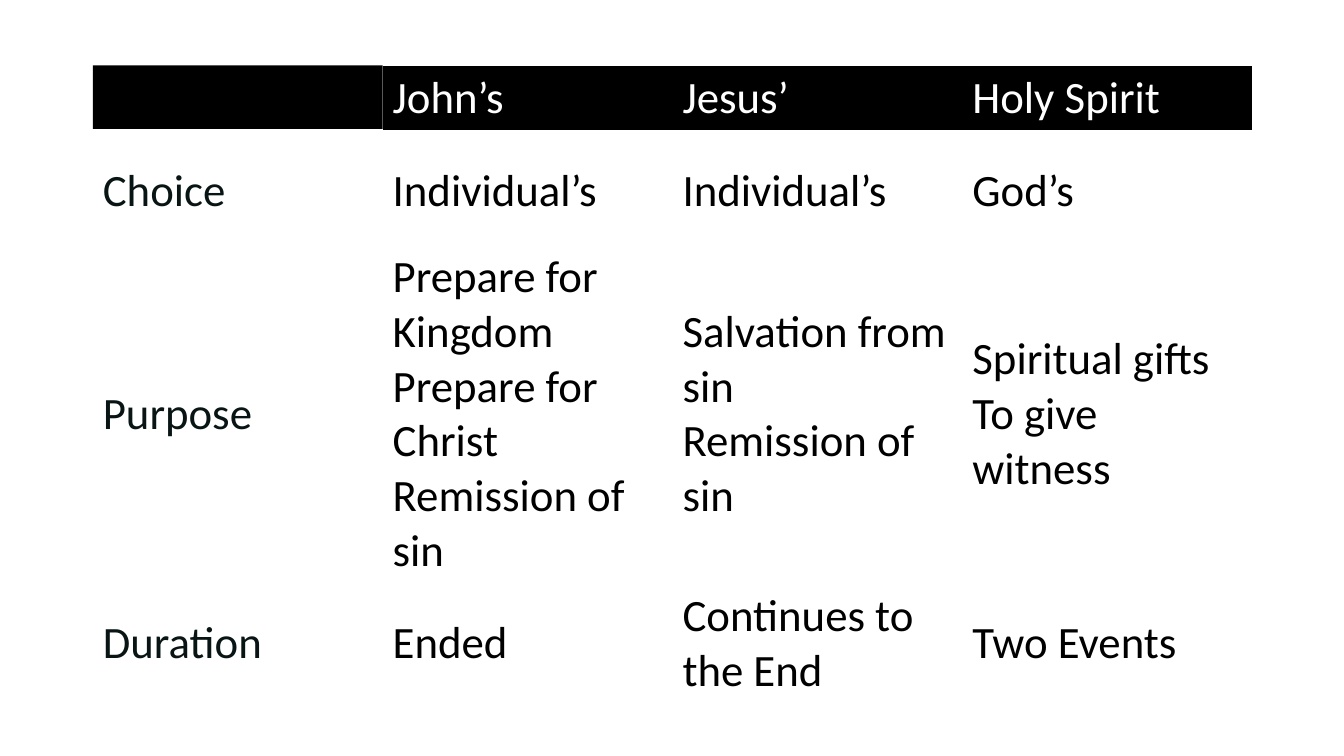
from pptx import Presentation
from pptx.dml.color import RGBColor as RGB
from pptx.enum.shapes import MSO_SHAPE as Shape
from pptx.enum.text import MSO_ANCHOR as Anchor
from pptx.oxml.ns import qn
from pptx.util import Inches, Pt

# Content: a cell with several lines holds one paragraph per line
HEADS = [["John’s", "Jesus’", "Holy Spirit"]]
ROWS = [
    ["Choice", "Individual’s", "Individual’s", "God’s"],
    ["Purpose",
     "Prepare for Kingdom\nPrepare for Christ\nRemission of sin",
     "Salvation from sin\nRemission of sin",
     "Spiritual gifts\nTo give witness"],
    ["Duration", "Ended", "Continues to the End", "Two Events"],
]

# Layout and colours
LEFT, TOP, BODY_TOP = 0.92, 0.65, 1.36
COL, HEAD_H = 2.875, 0.63
HEIGHTS = [1.07, 3.36, 1.19]
BLACK, WHITE, LABEL = "000000", "FFFFFF", "081514"
NO_STYLE = "{2D5ABB26-0587-4C30-8999-92F81FD0307C}"


def paint(fill, color):
    fill.solid()
    fill.fore_color.rgb = RGB.from_string(color)


def add_grid(slide, rows, left, top, heights):
    """Add a plain table without style, borders or banding."""
    count = len(rows[0])
    frame = slide.shapes.add_table(
        len(rows), count, Inches(left), Inches(top),
        Inches(COL * count), Inches(sum(heights)))
    next(frame.element.iter(qn("a:tableStyleId"))).text = NO_STYLE
    table = frame.table
    table.first_row = table.horz_banding = False
    for row, height in zip(table.rows, heights):
        row.height = Inches(height)
    return table


def write(cell, text, color, anchor):
    cell.text_frame.text = text
    cell.vertical_anchor = anchor
    for para in cell.text_frame.paragraphs:
        for run in para.runs:
            run.font.name = "Calibri"
            run.font.size = Pt(32)
            run.font.color.rgb = RGB.from_string(color)


def main():
    prs = Presentation()
    prs.slide_width, prs.slide_height = Inches(13.33), Inches(7.5)
    slide = prs.slides.add_slide(prs.slide_layouts[6])

    # Header row, right of the label column
    head = add_grid(slide, HEADS, LEFT + COL, TOP, [HEAD_H])
    for cell, text in zip(head.iter_cells(), HEADS[0]):
        write(cell, text, WHITE, Anchor.TOP)
        paint(cell.fill, BLACK)

    # Comparison table
    body = add_grid(slide, ROWS, LEFT, BODY_TOP, HEIGHTS)
    for r, row in enumerate(ROWS):
        for c, text in enumerate(row):
            cell = body.cell(r, c)
            write(cell, text, BLACK if c else LABEL, Anchor.MIDDLE)
            if c == 0:
                paint(cell.fill, WHITE)

    # Black block above the labels
    block = slide.shapes.add_shape(
        Shape.RECTANGLE, Inches(LEFT), Inches(TOP), Inches(COL), Inches(HEAD_H))
    block.shadow.inherit = False
    paint(block.fill, BLACK)
    block.line.fill.background()

    prs.save("out.pptx")


if __name__ == "__main__":
    main()
